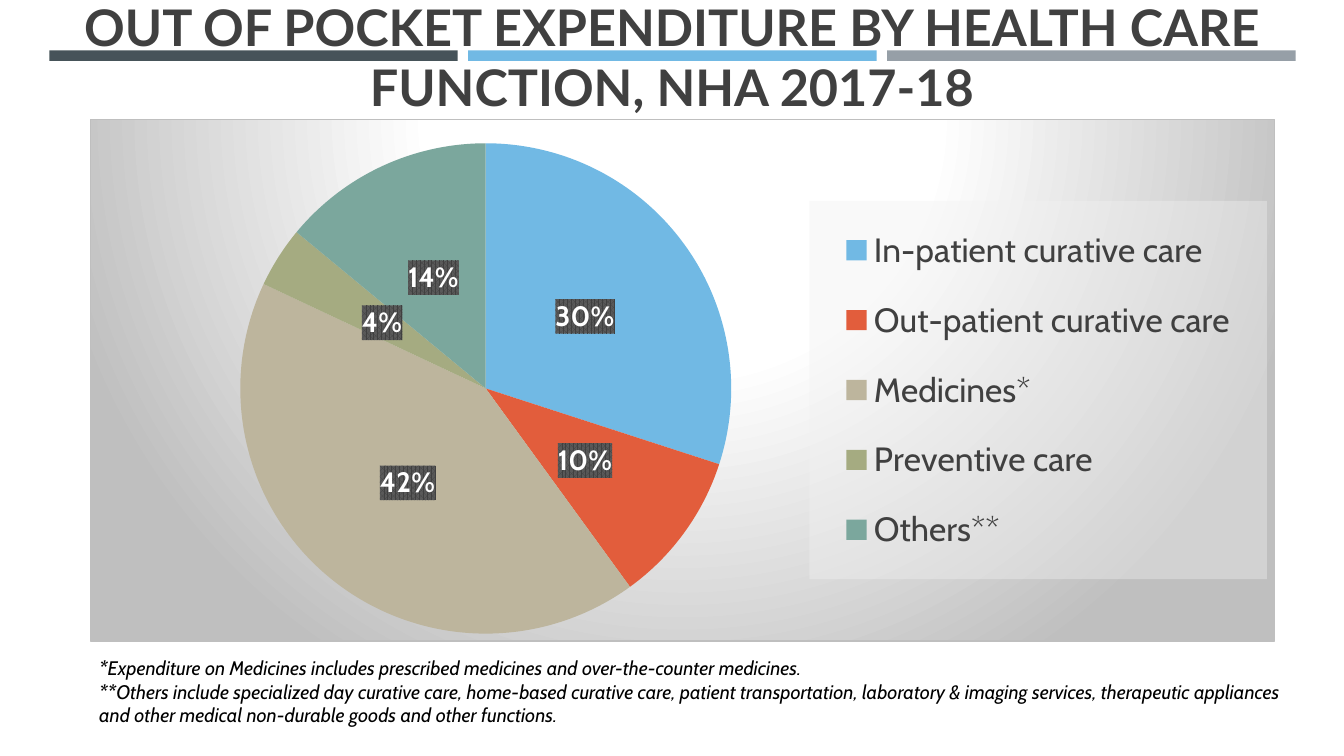
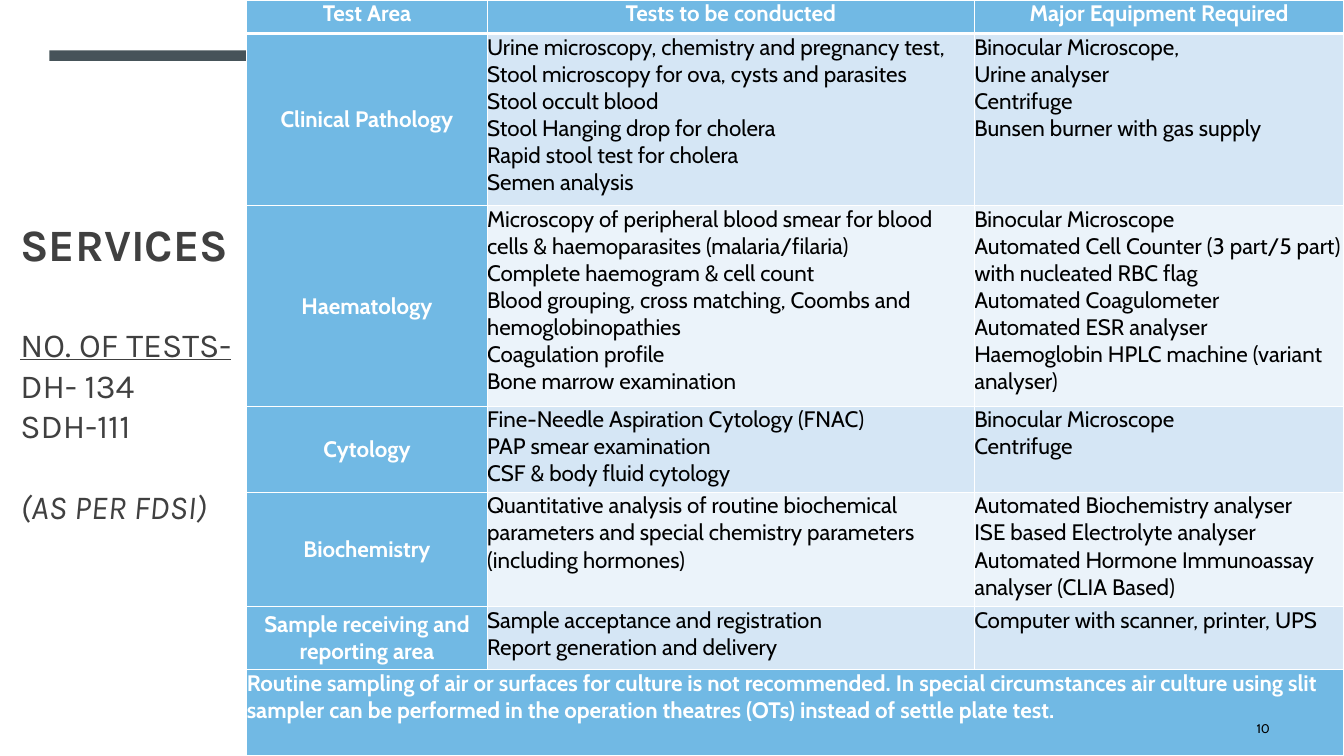
"""Build two health slides: a spending pie chart and a table of laboratory services."""

from dataclasses import dataclass

from pptx import Presentation
from pptx import slide as slides
from pptx import util as u
from pptx.chart import chart as charts
from pptx.chart import data as chart_data
from pptx.dml import color
from pptx.enum import chart as chart_enum
from pptx.enum import shapes, text
from pptx.oxml import ns, parse_xml
from pptx.table import _Cell as Cell
from pptx.text import text as text_parts

EMU_PER_PX = 9525


@dataclass(frozen=True)
class Theme:
    bands: tuple[str, ...] = ("465359", "71B9E4", "969FA7")
    blue: str = "71B9E4"
    ink: str = "404040"
    black: str = "000000"
    white: str = "FFFFFF"
    border: str = "BFBFBF"
    legend_fill: str = "F2F2F2"
    label_back: str = "595959"
    row_tints: tuple[str, ...] = ("D5E6F5", "EBF3FA")
    slices: tuple[str, ...] = ("71B9E4", "E25D3C", "BDB59D", "A5AB81", "7BA79D")
    body_font: str = "Cabin"
    title_font: str = "Lato"
    side_font: str = "Karla"
    title_size: int = 36
    heading_size: int = 32
    large_size: int = 24
    label_size: int = 20
    table_size: int = 16
    note_size: int = 14
    chart_size: int = 10
    number_size: int = 9


THEME = Theme()


@dataclass(frozen=True)
class Box:
    left: int
    top: int
    width: int
    height: int

    def emu(self) -> tuple[int, ...]:
        return tuple(px(side) for side in (self.left, self.top, self.width, self.height))


@dataclass(frozen=True)
class Style:
    font: str = THEME.body_font
    size: int = THEME.table_size
    color: str = THEME.black
    bold: bool = False
    italic: bool = False
    underline: bool = False


@dataclass(frozen=True)
class Line:
    runs: tuple[tuple[str, Style], ...]
    space_before: int = 0


@dataclass(frozen=True)
class TestArea:
    name: str
    tests: tuple[str, ...]
    equipment: tuple[str, ...]
    height: int


TITLE = Style(THEME.title_font, THEME.title_size, THEME.ink, bold=True)
HEADING = Style(THEME.side_font, THEME.heading_size, THEME.ink, bold=True)
SIDE = Style(THEME.side_font, THEME.large_size, THEME.ink)
SIDE_UNDERLINED = Style(THEME.side_font, THEME.large_size, THEME.ink, underline=True)
SIDE_ITALIC = Style(THEME.side_font, THEME.large_size, THEME.ink, italic=True)
NOTE = Style(size=THEME.note_size, italic=True)
NOTE_MARK = Style(size=THEME.note_size, bold=True, italic=True)
NUMBER = Style(size=THEME.number_size)
CELL = Style()
CELL_HEADER = Style(color=THEME.white, bold=True)
CHART = Style(size=THEME.chart_size)
LEGEND = Style(size=THEME.large_size, color=THEME.ink)
LABEL = Style(size=THEME.label_size, color=THEME.white, bold=True)

CHART_BOX = Box(86, 113, 1128, 498)
PIE_BOX = Box(142, 23, 469, 468)
LEGEND_BOX = Box(685, 78, 436, 361)
SPENDING = (
    ("In-patient curative care", 30),
    ("Out-patient curative care", 10),
    ("Medicines*", 42),
    ("Preventive care", 4),
    ("Others**", 14),
)
FOOTNOTES = (
    ("*", "Expenditure on Medicines includes prescribed medicines and over-the-counter medicines."),
    ("**", "Others include specialized day curative care, home-based curative care, patient "
     "transportation, laboratory & imaging services, therapeutic appliances and other medical "
     "non-durable goods and other functions."),
)
HEADERS = ("Test Area", "Tests to be conducted", "Major Equipment Required")
COLUMN_WIDTHS = (229, 464, 352)
HEADER_HEIGHT = 32
CLOSING_HEIGHT = 82
CLOSING = (
    "Routine sampling of air or surfaces for culture is not recommended. In special circumstances "
    "air culture using slit sampler can be performed in the operation theatres (OTs) instead of "
    "settle plate test."
)
TEST_AREAS = (
    TestArea(
        "Clinical Pathology",
        ("Urine microscopy, chemistry and pregnancy test,",
         "Stool microscopy for ova, cysts and parasites", "Stool occult blood",
         "Stool Hanging drop for cholera", "Rapid stool test for cholera", "Semen analysis"),
        ("Binocular Microscope,", "Urine analyser", "Centrifuge", "Bunsen burner with gas supply"),
        164),
    TestArea(
        "Haematology",
        ("Microscopy of peripheral blood smear for blood cells & haemoparasites (malaria/filaria)",
         "Complete haemogram & cell count",
         "Blood grouping, cross matching, Coombs and hemoglobinopathies",
         "Coagulation profile", "Bone marrow examination"),
        ("Binocular Microscope", "Automated Cell Counter (3 part/5 part) with nucleated RBC flag",
         "Automated Coagulometer", "Automated ESR analyser",
         "Haemoglobin HPLC machine (variant analyser)"),
        191),
    TestArea(
        "Cytology",
        ("Fine-Needle Aspiration Cytology (FNAC)", "PAP smear examination",
         "CSF & body fluid cytology"),
        ("Binocular Microscope", "Centrifuge"),
        82),
    TestArea(
        "Biochemistry",
        ("Quantitative analysis of routine biochemical parameters and special chemistry "
         "parameters (including hormones)",),
        ("Automated Biochemistry analyser", "ISE based Electrolyte analyser",
         "Automated Hormone Immunoassay analyser (CLIA Based)"),
        109),
    TestArea(
        "Sample receiving and reporting area",
        ("Sample acceptance and registration", "Report generation and delivery"),
        ("Computer with scanner, printer, UPS",),
        60),
)


def px(length: int) -> int:
    return u.Emu(length * EMU_PER_PX)


def rgb(value: str) -> color.RGBColor:
    return color.RGBColor.from_string(value)


def solid(value: str, extra: str = "") -> str:
    return f'<a:solidFill><a:srgbClr val="{value}">{extra}</a:srgbClr></a:solidFill>'


def apply_style(font: text_parts.Font, style: Style) -> None:
    font.name, font.size = style.font, u.Pt(style.size)
    font.bold, font.italic, font.underline = style.bold, style.italic, style.underline
    font.color.rgb = rgb(style.color)


def write_lines(frame: text_parts.TextFrame, lines: list[Line],
                align: text.PP_ALIGN = text.PP_ALIGN.LEFT) -> None:
    for index, line in enumerate(lines):
        paragraph = frame.add_paragraph() if index else frame.paragraphs[0]
        paragraph.alignment = align
        paragraph.space_before = u.Pt(line.space_before)
        for content, style in line.runs:
            run = paragraph.add_run()
            run.text = content
            apply_style(run.font, style)


def add_text(slide: slides.Slide, box: Box, lines: list[Line],
             align: text.PP_ALIGN = text.PP_ALIGN.LEFT,
             anchor: text.MSO_ANCHOR = text.MSO_ANCHOR.TOP) -> None:
    frame = slide.shapes.add_textbox(*box.emu()).text_frame
    frame.word_wrap = True
    frame.vertical_anchor = anchor
    write_lines(frame, lines, align)


def move_bands_to_layout(slide: slides.Slide) -> None:
    layout = slide.slide_layout
    for placeholder in list(layout.placeholders):
        layout.shapes.element.remove(placeholder.element)
    bands = []
    for index, value in enumerate(THEME.bands):
        box = Box(47 + 399 * index, 48, 389, 10)
        band = slide.shapes.add_shape(shapes.MSO_SHAPE.RECTANGLE, *box.emu())
        band.shadow.inherit = False
        band.fill.solid()
        band.fill.fore_color.rgb = rgb(value)
        band.line.fill.background()
        bands.append(band)
    for band in bands:
        layout.shapes.element.append(band.element)


def chart_element(tag: str, body: str):
    return parse_xml(f'<c:{tag} {ns.nsdecls("c", "a")}>{body}</c:{tag}>')


def manual_layout(box: Box, target: str = ""):
    modes = '<c:xMode val="edge"/><c:yMode val="edge"/>'
    shares = (box.left / CHART_BOX.width, box.top / CHART_BOX.height,
              box.width / CHART_BOX.width, box.height / CHART_BOX.height)
    values = "".join(f'<c:{side} val="{share:.4f}"/>' for side, share in zip("xywh", shares))
    return chart_element("layout", f"<c:manualLayout>{target}{modes}{values}</c:manualLayout>")


def style_chart_area(chart: charts.Chart) -> None:
    stops = ((0, THEME.white), (39, THEME.white), (100, THEME.border))
    gradient = "".join(
        f'<a:gs pos="{stop * 1000}"><a:srgbClr val="{value}"/></a:gs>' for stop, value in stops)
    area = chart_element(
        "spPr",
        f'<a:gradFill><a:gsLst>{gradient}</a:gsLst><a:path path="circle">'
        '<a:fillToRect l="50000" t="-80000" r="50000" b="180000"/></a:path></a:gradFill>'
        f'<a:ln w="{px(1)}">{solid(THEME.border)}</a:ln>')
    chart.element.find(ns.qn("c:chart")).addnext(area)
    plot_area = chart.element.find(".//" + ns.qn("c:plotArea"))
    for layout in plot_area.findall(ns.qn("c:layout")):
        plot_area.remove(layout)
    plot_area.insert(0, manual_layout(PIE_BOX, '<c:layoutTarget val="inner"/>'))


def style_legend(chart: charts.Chart) -> None:
    chart.has_legend = True
    legend = chart.legend
    legend.position = chart_enum.XL_LEGEND_POSITION.RIGHT
    legend.include_in_layout = False
    apply_style(legend.font, LEGEND)
    overlay = chart.element.find(".//" + ns.qn("c:legend")).find(ns.qn("c:overlay"))
    overlay.addprevious(manual_layout(LEGEND_BOX))
    overlay.addnext(chart_element("spPr", solid(THEME.legend_fill, '<a:alpha val="39000"/>')))


def style_labels(chart: charts.Chart) -> None:
    plot = chart.plots[0]
    plot.vary_by_categories = True
    plot.has_data_labels = True
    labels = plot.data_labels
    labels.show_percentage, labels.show_value = True, False
    labels.number_format, labels.number_format_is_linked = "0%", False
    labels.position = chart_enum.XL_LABEL_POSITION.CENTER
    apply_style(labels.font, LABEL)
    pattern = (f'<a:pattFill prst="pct75"><a:fgClr><a:srgbClr val="{THEME.ink}"/></a:fgClr>'
               f'<a:bgClr><a:srgbClr val="{THEME.label_back}"/></a:bgClr></a:pattFill>')
    labels_xml = chart.element.find(".//" + ns.qn("c:dLbls"))
    labels_xml.find(ns.qn("c:txPr")).addprevious(chart_element("spPr", pattern))


def add_spending_chart(slide: slides.Slide) -> None:
    data = chart_data.CategoryChartData()
    data.categories = [name for name, _ in SPENDING]
    data.add_series("Series 1", [share for _, share in SPENDING])
    chart = slide.shapes.add_chart(chart_enum.XL_CHART_TYPE.PIE, *CHART_BOX.emu(), data).chart
    chart.has_title = False
    apply_style(chart.font, CHART)
    for index, value in enumerate(THEME.slices):
        fill = chart.plots[0].series[0].points[index].format.fill
        fill.solid()
        fill.fore_color.rgb = rgb(value)
    for style_part in (style_chart_area, style_legend, style_labels):
        style_part(chart)


def fill_cell(cell: Cell, paragraphs: tuple[str, ...], style: Style, fill: str,
              centred: bool = False, middle: bool = False, bottom_width: int = 1) -> None:
    cell.margin_left = cell.margin_right = cell.margin_top = cell.margin_bottom = 0
    cell.vertical_anchor = text.MSO_ANCHOR.MIDDLE if middle else text.MSO_ANCHOR.TOP
    cell.fill.solid()
    cell.fill.fore_color.rgb = rgb(fill)
    align = text.PP_ALIGN.CENTER if centred else text.PP_ALIGN.LEFT
    write_lines(cell.text_frame, [Line(((content, style),)) for content in paragraphs], align)
    properties = cell._tc.get_or_add_tcPr()
    for index, side in enumerate("LRTB"):
        width = u.Pt(bottom_width if side == "B" else 1)
        properties.insert(index, parse_xml(
            f'<a:ln{side} {ns.nsdecls("a")} w="{width}">{solid(THEME.white)}</a:ln{side}>'))


def add_services_table(slide: slides.Slide) -> None:
    heights = (HEADER_HEIGHT, *(area.height for area in TEST_AREAS), CLOSING_HEIGHT)
    box = Box(235, 0, sum(COLUMN_WIDTHS), sum(heights))
    table = slide.shapes.add_table(len(heights), len(HEADERS), *box.emu()).table
    for column, width in zip(table.columns, COLUMN_WIDTHS):
        column.width = px(width)
    for row, height in zip(table.rows, heights):
        row.height = px(height)
    for index, header in enumerate(HEADERS):
        fill_cell(table.cell(0, index), (header,), CELL_HEADER, THEME.blue, True, bottom_width=3)
    for index, area in enumerate(TEST_AREAS):
        tint = THEME.row_tints[index % 2]
        name, tests, equipment = table.rows[index + 1].cells
        fill_cell(name, (area.name,), CELL_HEADER, THEME.blue, centred=True, middle=True)
        fill_cell(tests, area.tests, CELL, tint)
        fill_cell(equipment, area.equipment, CELL, tint)
    closing = table.cell(len(heights) - 1, 0)
    closing.merge(table.cell(len(heights) - 1, len(HEADERS) - 1))
    fill_cell(closing, (CLOSING,), CELL_HEADER, THEME.blue)


def build_spending_slide(slide: slides.Slide) -> None:
    title = "OUT OF POCKET EXPENDITURE BY HEALTH CARE FUNCTION, NHA 2017-18"
    add_text(slide, Box(0, 34, 1280, 82), [Line(((title, TITLE),))],
             text.PP_ALIGN.CENTER, text.MSO_ANCHOR.BOTTOM)
    notes = [Line(((mark, NOTE_MARK), (note, NOTE))) for mark, note in FOOTNOTES]
    add_text(slide, Box(85, 620, 1174, 100), notes)
    add_spending_chart(slide)


def build_services_slide(slide: slides.Slide) -> None:
    add_text(slide, Box(10, 202, 263, 352), [
        Line((("SERVICES", HEADING),)),
        Line((("NO. OF TESTS-", SIDE_UNDERLINED),), 38),
        Line((("DH- 134", SIDE),)),
        Line((("SDH-111", SIDE),)),
        Line((("(AS PER FDSI)", SIDE_ITALIC),), 29)])
    add_services_table(slide)
    add_text(slide, Box(1109, 675, 110, 38), [Line((("10", NUMBER),))],
             text.PP_ALIGN.RIGHT, text.MSO_ANCHOR.MIDDLE)


def main() -> None:
    presentation = Presentation()
    presentation.slide_width, presentation.slide_height = px(1280), px(720)
    blank = presentation.slide_layouts[6]
    spending, services = (presentation.slides.add_slide(blank) for _ in range(2))
    move_bands_to_layout(spending)
    build_spending_slide(spending)
    build_services_slide(services)
    presentation.save("out.pptx")


if __name__ == "__main__":
    main()
